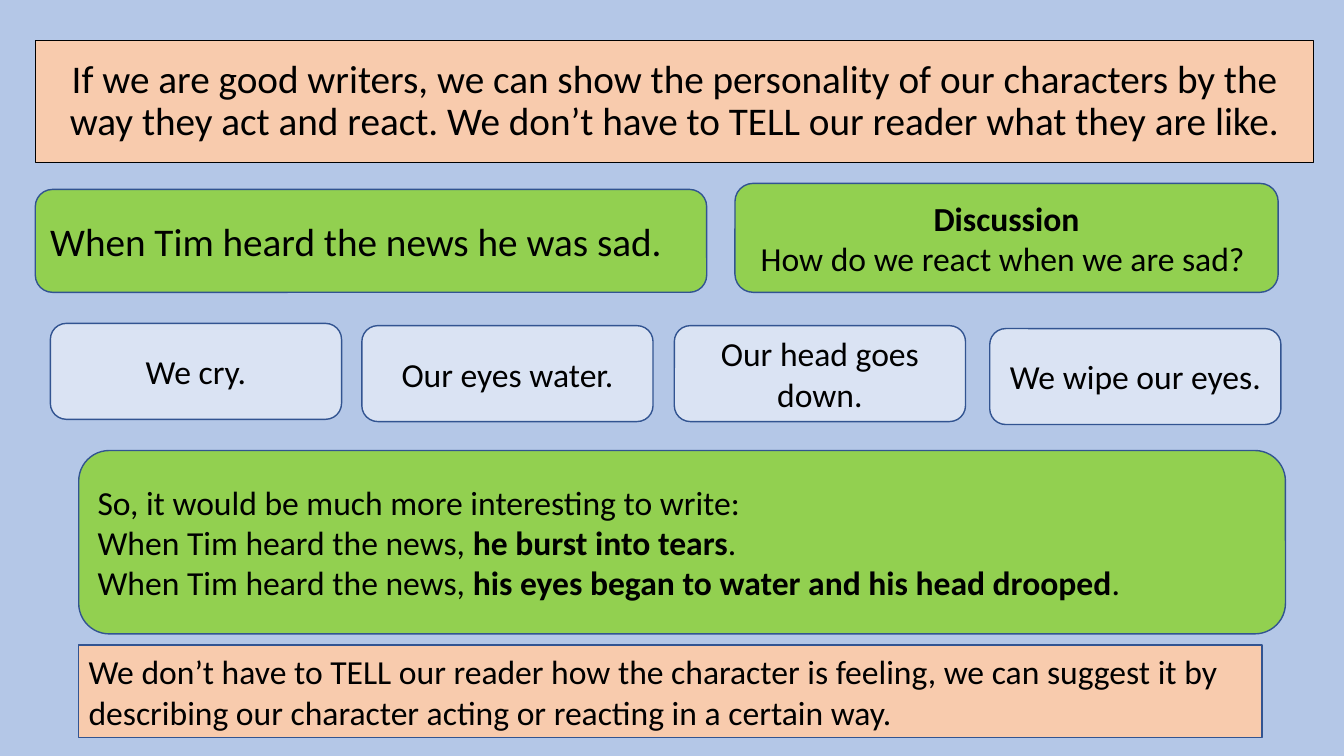
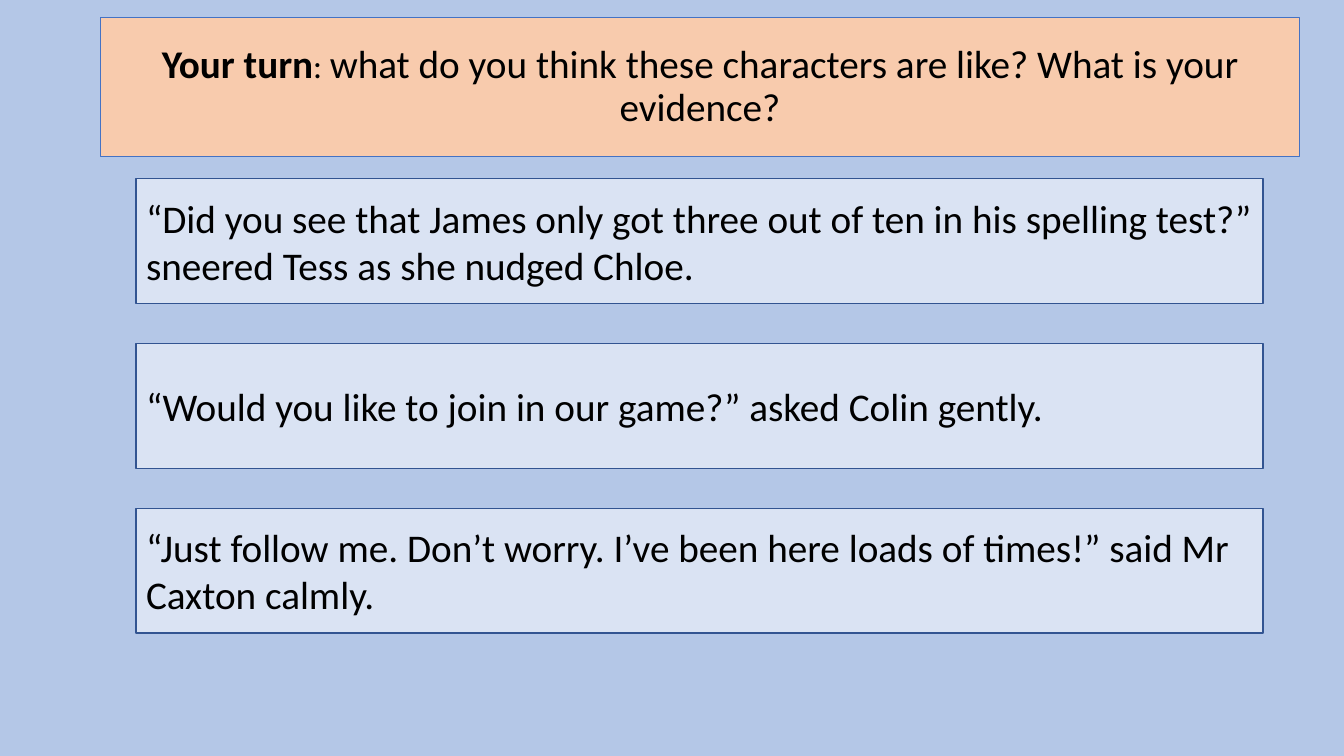
from pptx import Presentation
from pptx.dml.color import RGBColor
from pptx.enum.shapes import MSO_SHAPE as Shape
from pptx.enum.text import MSO_ANCHOR as Anchor, PP_ALIGN as Align
from pptx.util import Pt

SKY = RGBColor(0xB4, 0xC7, 0xE7)
PEACH = RGBColor(0xF8, 0xCB, 0xAD)
GREEN = RGBColor(0x92, 0xD0, 0x50)
PALE = RGBColor(0xDA, 0xE3, 0xF3)
NAVY = RGBColor(0x32, 0x54, 0x91)
BLUE = RGBColor(0x44, 0x72, 0xC4)
BLACK = RGBColor(0, 0, 0)

TITLE = {"alignment": Align.CENTER, "line_spacing": 0.9}
CENTRED = {"alignment": Align.CENTER}
LEFT = {"alignment": Align.LEFT}

deck = Presentation()
deck.slide_width, deck.slide_height = Pt(960), Pt(540)


def add_page():
    page = deck.slides.add_slide(deck.slide_layouts[6])
    page.background.fill.solid()
    page.background.fill.fore_color.rgb = SKY
    return page


def add_box(page, kind, place, fill, paragraphs, size, style, line=NAVY, weight=1):
    box = page.shapes.add_shape(kind, *[Pt(length) for length in place])
    box.shadow.inherit = False
    box.fill.solid()
    box.fill.fore_color.rgb = fill
    box.line.color.rgb = line
    box.line.width = Pt(weight)
    frame = box.text_frame
    frame.word_wrap = True
    frame.vertical_anchor = Anchor.MIDDLE
    for index, spans in enumerate(paragraphs):
        para = frame.add_paragraph() if index else frame.paragraphs[0]
        for name, value in style.items():
            setattr(para, name, value)
        for text, *changes in spans:
            span = para.add_run()
            span.text = text
            span.font.color.rgb = BLACK
            font = {"name": "Calibri", "size": Pt(size), "bold": False}
            for change in changes:
                font.update(change)
            for name, value in font.items():
                setattr(span.font, name, value)


BOLD = {"bold": True}

page = add_page()
add_box(page, Shape.RECTANGLE, (25.2, 28.8, 913, 87.6), PEACH,
        [[("If we are good writers, we can show the personality of our characters by the "
           "way they act and react. We don’t have to TELL our reader what they are like.",)]],
        28, TITLE, BLACK, 0.75)
add_box(page, Shape.ROUNDED_RECTANGLE, (25.2, 135.3, 479.6, 73.5), GREEN,
        [[("When Tim heard the news he was sad.",)]], 28, LEFT)
add_box(page, Shape.ROUNDED_RECTANGLE, (525, 131, 388, 77.8), GREEN,
        [[("Discussion", BOLD)], [("How do we react when we are sad? ",)]], 24, CENTRED)

reactions = [
    (36, 231, "We cry."),
    (258.5, 232.6, "Our eyes water."),
    (481.7, 232.6, "Our head goes down."),
    (707, 234.7, "We wipe our eyes."),
]
for left, top, reaction in reactions:
    add_box(page, Shape.ROUNDED_RECTANGLE, (left, top, 208, 68.5), PALE,
            [[(reaction,)]], 24, CENTRED)

add_box(page, Shape.ROUNDED_RECTANGLE, (56.2, 321.8, 862, 131), GREEN,
        [[("So, it would be much more interesting to write:",)]]
        + [[("When Tim heard the news, ",), (ending, BOLD), (".",)] for ending in (
            "he burst into tears",
            "his eyes began to water and his head drooped")],
        24, LEFT)
add_box(page, Shape.RECTANGLE, (56.2, 460.8, 845.3, 66.2), PEACH,
        [[("We don’t have to TELL our reader how the character is feeling, we can suggest it by "
           "describing our character acting or reacting in a certain way.",)]], 24, LEFT)

page = add_page()
add_box(page, Shape.RECTANGLE, (72, 12.6, 856, 99.4), PEACH,
        [[("Your turn", BOLD), (": ", {"size": Pt(24)}),
          ("what do you think these characters are like? What is your evidence?",)]],
        28, TITLE, BLUE, 0.75)

quotes = [
    "“Did you see that James only got three out of ten in his spelling test?” "
    "sneered Tess as she nudged Chloe.",
    "“Would you like to join in our game?” asked Colin gently.",
    "“Just follow me. Don’t worry. I’ve been here loads of times!” said Mr Caxton calmly.",
]
for row, quote in enumerate(quotes):
    add_box(page, Shape.RECTANGLE, (97.2, 127.6 + row * 117.7, 805, 89.2), PALE,
            [[(quote,)]], 28, LEFT)

deck.save("out.pptx")
